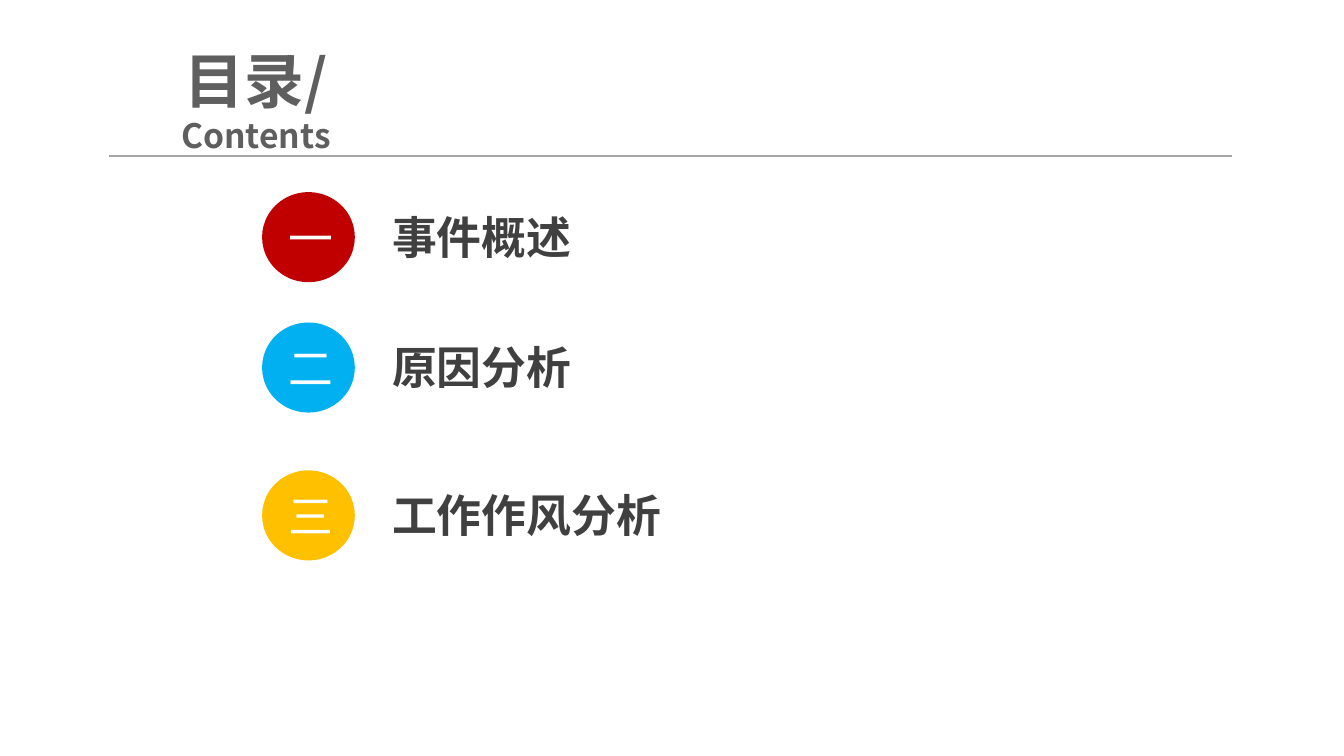
from collections import namedtuple
from dataclasses import dataclass

from lxml.etree import SubElement
from pptx import Presentation
from pptx.dml.color import RGBColor
from pptx.enum.shapes import MSO_CONNECTOR, MSO_SHAPE
from pptx.enum.text import MSO_ANCHOR, MSO_AUTO_SIZE, PP_ALIGN
from pptx.oxml.ns import qn
from pptx.util import Inches, Pt

Box = namedtuple("Box", "left top width height")


@dataclass(frozen=True)
class Theme:
    font: str = "Noto Sans CJK SC"
    title: str = "5F5F5F"
    body: str = "404040"
    rule: str = "A6A6A6"
    number: str = "FFFFFF"
    title_size: int = 32
    subtitle_size: int = 18
    entry_size: int = 24


THEME = Theme()
WIDTH = 10
HEIGHT = WIDTH * 9 / 16
ENTRIES = [
    # number, heading, circle colour, top, heading width
    ("一", "事件概述", "C00000", 1.43, 1.53),
    ("二", "原因分析", "00B0F0", 2.40, 1.53),
    ("三", "工作作风分析", "FFC000", 3.50, 2.20),
]


def inches(box):
    return [Inches(length) for length in box]


def style_run(run, size, color, bold=False):
    run.font.size = Pt(size)
    run.font.bold = bold
    run.font.color.rgb = RGBColor.from_string(color)
    run.font.name = THEME.font
    # East Asian glyphs take their own typeface entry
    SubElement(run.font._element, qn("a:ea"), typeface=THEME.font)


def add_header(slide, box, rule_box):
    # Two-line title
    title = slide.shapes.title
    title.left, title.top, title.width, title.height = inches(box)
    frame = title.text_frame
    frame.text = "目录/\vContents"
    frame.auto_size = MSO_AUTO_SIZE.NONE
    frame.vertical_anchor = MSO_ANCHOR.MIDDLE
    paragraph = frame.paragraphs[0]
    paragraph.alignment = PP_ALIGN.CENTER
    paragraph.line_spacing = 1.0
    paragraph.space_before = Pt(0)
    for run, size in zip(paragraph.runs, (THEME.title_size, THEME.subtitle_size)):
        style_run(run, size, THEME.title, bold=True)

    # Rule under the title
    left, top, width, _ = inches(rule_box)
    rule = slide.shapes.add_connector(
        MSO_CONNECTOR.STRAIGHT, left, top, left + width, top)
    rule.line.color.rgb = RGBColor.from_string(THEME.rule)
    rule.line.width = Pt(0.75)
    SubElement(rule._element.spPr, qn("a:effectLst"))


def add_entry(slide, box, number, heading, color):
    group = slide.shapes.add_group_shape()

    # Numbered circle at the left of the row
    circle_box = Box(box.left, box.top, 0.69, box.height)
    circle = group.shapes.add_shape(MSO_SHAPE.OVAL, *inches(circle_box))
    circle.shadow.inherit = False
    circle.fill.solid()
    circle.fill.fore_color.rgb = RGBColor.from_string(color)
    circle.line.fill.background()
    frame = circle.text_frame
    frame.text = number
    frame.vertical_anchor = MSO_ANCHOR.MIDDLE
    frame.paragraphs[0].alignment = PP_ALIGN.CENTER
    style_run(frame.paragraphs[0].runs[0], THEME.entry_size, THEME.number)

    # Heading fills the rest of the row
    indent = 0.87
    heading_box = Box(box.left + indent, box.top + 0.08, box.width - indent, 0.5)
    label = group.shapes.add_textbox(*inches(heading_box))
    frame = label.text_frame
    frame.text = heading
    frame.word_wrap = False
    frame.auto_size = MSO_AUTO_SIZE.SHAPE_TO_FIT_TEXT
    style_run(frame.paragraphs[0].runs[0], THEME.entry_size, THEME.body, bold=True)


def main():
    presentation = Presentation()
    presentation.slide_width = Inches(WIDTH)
    presentation.slide_height = Inches(HEIGHT)
    slide = presentation.slides.add_slide(presentation.slide_layouts[5])

    add_header(slide, Box(0.67, 0.47, 2.47, 0.54), Box(0.81, 1.16, 8.36, 0))
    for number, heading, color, top, heading_width in ENTRIES:
        row = Box(1.95, top, 0.87 + heading_width, 0.67)
        add_entry(slide, row, number, heading, color)

    presentation.save("out.pptx")


if __name__ == "__main__":
    main()
